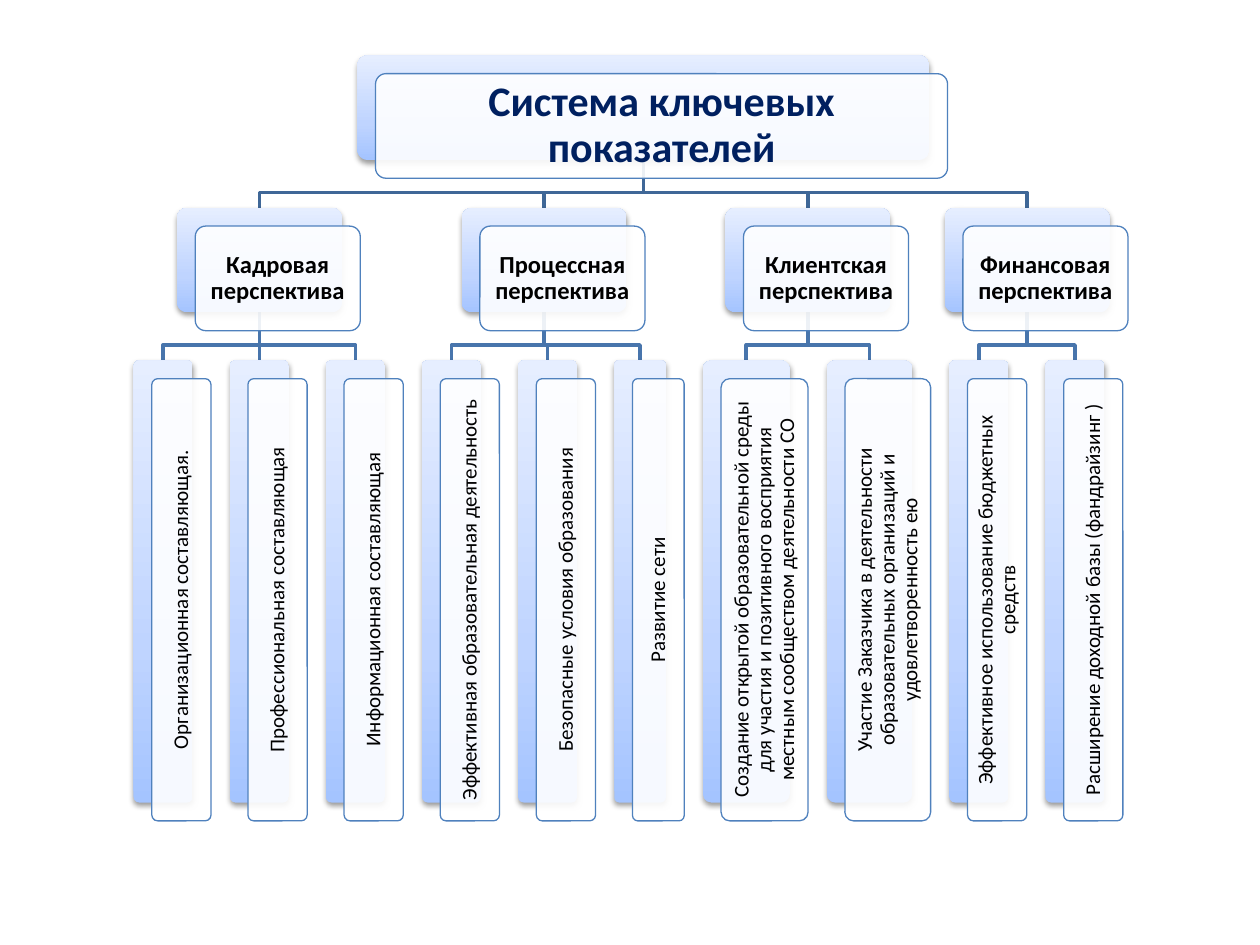
from lxml.etree import SubElement
from pptx import Presentation
from pptx.dml.color import RGBColor
from pptx.enum.shapes import MSO_CONNECTOR, MSO_SHAPE
from pptx.enum.text import MSO_ANCHOR, MSO_AUTO_SIZE, PP_ALIGN
from pptx.oxml import parse_xml
from pptx.oxml.ns import nsdecls, qn
from pptx.util import Inches as In, Pt

BRANCHES = [
    ("Кадровая перспектива", [
        ("Организационная составляющая.", 0.47),
        ("Профессиональная составляющая", 0.47),
        ("Информационная составляющая", 0.47)]),
    ("Процессная перспектива", [
        ("Эффективная образовательная деятельность", 0.47),
        ("Безопасные условия образования", 0.47),
        ("Развитие сети", 0.41)]),
    ("Клиентская перспектива", [
        ("Создание открытой образовательной среды для участия и позитивного "
         "восприятия местным сообществом деятельности СО", 0.69),
        ("Участие Заказчика в деятельности образовательных организаций "
         "и удовлетворенность ею", 0.68)]),
    ("Финансовая перспектива", [
        ("Эффективное использование бюджетных средств", 0.47),
        ("Расширение доходной базы (фандрайзинг )", 0.47)]),
]
LEFT, GAP, SHIFT = 1.06, 0.29, 0.145
ROWS = [0.44, 1.65, 2.86]       # tops of the three levels
BOX_W, BOX_H, ROOT_W, LEAF_H = 1.31, 0.83, 4.54, 3.51
BACK_FILL = f"""<a:gradFill {nsdecls('a')} rotWithShape="1"><a:gsLst>
<a:gs pos="0"><a:srgbClr val="A4C4FF"/></a:gs>
<a:gs pos="35000"><a:srgbClr val="BFD4FF"/></a:gs>
<a:gs pos="100000"><a:srgbClr val="E6EEFF"/></a:gs>
</a:gsLst><a:lin ang="16200000" scaled="0"/></a:gradFill>"""
BACK_SHADOW = f"""<a:effectLst {nsdecls('a')}>
<a:outerShdw blurRad="40000" dist="20000" dir="5400000" rotWithShape="0">
<a:srgbClr val="000000"><a:alpha val="38000"/></a:srgbClr>
</a:outerShdw></a:effectLst>"""

prs = Presentation()
prs.slide_width, prs.slide_height = In(10), In(7.5)
s = prs.slides.add_slide(prs.slide_layouts[5])
title = s.shapes.title


def color(hex_value):
    return RGBColor.from_string(hex_value)


def card(center, top, w, h, text, size, ink="000000", bold=False,
         inset=0.05, vert=None, holder=None):
    """Shaded back plate, white front plate and its label."""
    x = center - w / 2
    back, front = [s.shapes.add_shape(MSO_SHAPE.ROUNDED_RECTANGLE, In(x + d), In(top + d), In(w), In(h))
                   for d in (0, SHIFT)]
    for plate in (back, front):
        plate.adjustments[0] = 0.1
    back.line.fill.background()
    pr = back._element.spPr
    pr.insert(2, parse_xml(BACK_FILL))
    pr.append(parse_xml(BACK_SHADOW))

    front.shadow.inherit = False
    front.fill.solid()
    front.fill.fore_color.rgb = color("FFFFFF")
    tint = front._element.spPr.find(qn("a:solidFill"))[0]
    SubElement(tint, qn("a:alpha"), val="90000")
    front.line.color.rgb = color("4F81BD")
    front.line.width = Pt(0.75)

    label = front
    if holder is not None:
        label = holder
        label.left, label.top, label.width, label.height = front.left, front.top, front.width, front.height
        s.shapes._spTree.append(label._element)
    tf = label.text_frame
    frame = dict(word_wrap=True, auto_size=MSO_AUTO_SIZE.NONE, vertical_anchor=MSO_ANCHOR.MIDDLE)
    frame.update({f"margin_{side}": In(inset) for side in ("left", "top", "right", "bottom")})
    for name, value in frame.items():
        setattr(tf, name, value)
    if vert:
        tf._txBody.bodyPr.set("vert", vert)
    p = tf.paragraphs[0]
    p.alignment, p.line_spacing = PP_ALIGN.CENTER, 0.9
    r = p.add_run()
    r.text = text
    for name, value in dict(name="Calibri", size=Pt(size), bold=bold).items():
        setattr(r.font, name, value)
    r.font.color.rgb = color(ink)


# Layout: leaves run left to right, each parent is centred over its children
x, tree = LEFT, []
for heading, leaves in BRANCHES:
    start, placed = x, []
    for text, w in leaves:
        placed.append((x + w / 2, w, text))
        x += w + GAP + 0.003
    tree.append(((start + x - GAP) / 2, heading, placed))
root = (tree[0][0] + tree[-1][0]) / 2

# Branch lines, behind the cards
links = [(root, mid, 0, "3F6797") for mid, _, _ in tree]
links += [(mid, leaf[0], 1, "4875AC") for mid, _, placed in tree for leaf in placed]
for x0, x1, level, ink in links:
    y0, y1 = ROWS[level] + BOX_H, ROWS[level + 1]
    bend = y0 + (y1 - y0) * 0.68
    if abs(x1 - x0) < 0.01:
        link = s.shapes.add_connector(MSO_CONNECTOR.STRAIGHT, In(x0), In(y0), In(x0), In(y1))
        SubElement(link._element.spPr, qn("a:effectLst"))
    else:
        fb = s.shapes.build_freeform(In(x0), In(y0))
        fb.add_line_segments([(In(x0), In(bend)), (In(x1), In(bend)), (In(x1), In(y1))], close=False)
        link = fb.convert_to_shape()
        link.fill.background()
        link.shadow.inherit = False
    link.line.color.rgb = color(ink)
    link.line.width = Pt(2)

# Cards
card(root, ROWS[0], ROOT_W, BOX_H, "Система ключевых показателей", 24, "002060", True, 0.1, holder=title)
for mid, heading, placed in tree:
    card(mid, ROWS[1], BOX_W, BOX_H, heading, 14, bold=True, inset=0.06)
    for center, w, text in placed:
        card(center, ROWS[2], w, LEAF_H, text, 12, vert="vert270")

prs.save("out.pptx")
